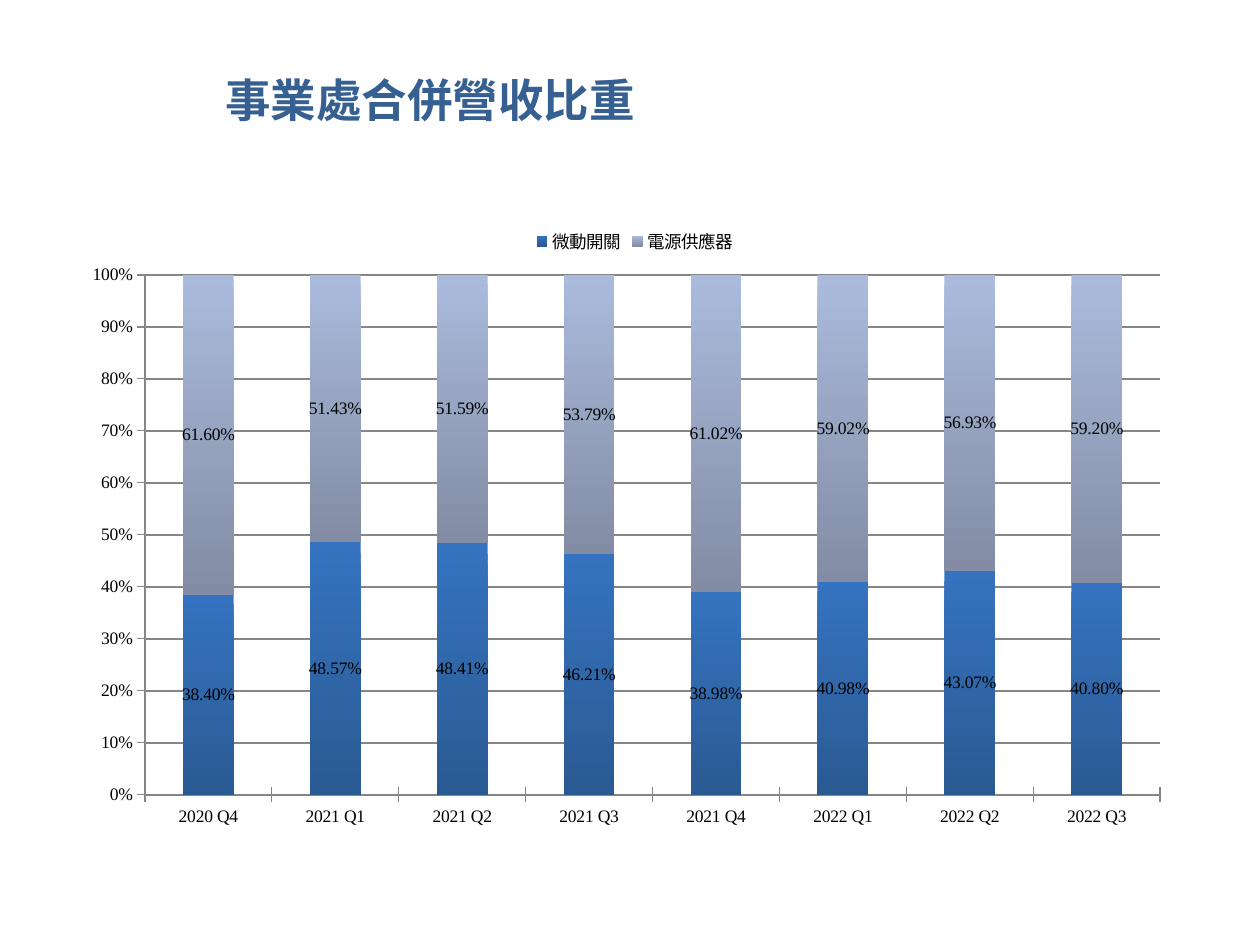
from lxml.etree import SubElement
from pptx import Presentation
from pptx.chart.data import CategoryChartData
from pptx.dml.color import RGBColor
from pptx.enum.chart import XL_CHART_TYPE, XL_LEGEND_POSITION, XL_TICK_MARK
from pptx.enum.text import MSO_ANCHOR
from pptx.oxml.ns import qn
from pptx.util import Cm, Pt

SERIF, CJK = "Times New Roman", "Noto Sans CJK SC"
QUARTERS = ["2020 Q4", "2021 Q1", "2021 Q2", "2021 Q3",
            "2021 Q4", "2022 Q1", "2022 Q2", "2022 Q3"]
# name, shares, gradient from top to bottom
SERIES = [
    ("微動開關", [0.384, 0.4857, 0.4841, 0.4621, 0.3898, 0.4098, 0.4307, 0.408],
     ("3573C0", "2A5A92")),
    ("電源供應器", [0.616, 0.5143, 0.5159, 0.5379, 0.6102, 0.5902, 0.5693, 0.592],
     ("AABBDD", "838CA4")),
]
PLOT = {"x": 0.055, "y": 0.097, "w": 0.922, "h": 0.832}


def paint(code):
    return RGBColor.from_string(code)


def style(font, name, size=10, color="000000", bold=False):
    values = {"name": name, "size": Pt(size), "bold": bold}
    for key, value in values.items():
        setattr(font, key, value)
    font.color.rgb = paint(color)


def rule(line, width):
    line.color.rgb = paint("868686")
    line.width = Pt(width)


def place_plot(chart):
    """Fix the inner plot area as fractions of the chart."""
    area = chart._chartSpace.chart.plotArea
    layout = area.find(qn("c:layout"))
    if layout is None:
        layout = SubElement(area, qn("c:layout"))
        area.insert(0, layout)
    manual = SubElement(layout, qn("c:manualLayout"))
    parts = {"layoutTarget": "inner", "xMode": "edge", "yMode": "edge", **PLOT}
    for key, value in parts.items():
        SubElement(manual, qn(f"c:{key}")).set("val", str(value))


def add_title(slide, left, top, width, height):
    box = slide.shapes.add_textbox(Cm(left), Cm(top), Cm(width), Cm(height))
    frame = box.text_frame
    frame.word_wrap = True
    frame.vertical_anchor = MSO_ANCHOR.MIDDLE
    run = frame.paragraphs[0].add_run()
    run.text = "事業處合併營收比重"
    style(run.font, SERIF, 26, "376092", True)


def add_shares(slide, left, top, width, height):
    data = CategoryChartData(number_format="0.00%")
    data.categories = QUARTERS
    for name, shares, _ in SERIES:
        data.add_series(name, shares)
    chart = slide.shapes.add_chart(
        XL_CHART_TYPE.COLUMN_STACKED, Cm(left), Cm(top), Cm(width), Cm(height),
        data).chart
    chart.has_title = False
    style(chart.font, "Calibri")
    place_plot(chart)

    # Legend
    chart.has_legend = True
    legend = chart.legend
    legend.position = XL_LEGEND_POSITION.TOP
    legend.include_in_layout = False
    style(legend.font, CJK)

    # Axes
    for axis in (chart.category_axis, chart.value_axis):
        axis.major_tick_mark = XL_TICK_MARK.CROSS
        axis.minor_tick_mark = XL_TICK_MARK.NONE
        style(axis.tick_labels.font, SERIF)
        rule(axis.format.line, 0.75)
    scale = chart.value_axis
    limits = {"minimum_scale": 0, "maximum_scale": 1, "major_unit": 0.1,
              "has_major_gridlines": True}
    for key, value in limits.items():
        setattr(scale, key, value)
    rule(scale.major_gridlines.format.line, 1)
    scale.tick_labels.number_format = "0%"
    scale.tick_labels.number_format_is_linked = False

    # Columns and labels
    plot = chart.plots[0]
    for key, value in {"gap_width": 150, "overlap": 100,
                       "vary_by_categories": False}.items():
        setattr(plot, key, value)
    for series, (_, _, shades) in zip(plot.series, SERIES):
        fill = series.format.fill
        fill.gradient()
        fill.gradient_angle = 270
        for stop, shade in zip(fill.gradient_stops, shades):
            stop.color.rgb = paint(shade)
        labels = series.data_labels
        labels.show_value = True
        labels.number_format = "0.00%"
        labels.number_format_is_linked = False
        style(labels.font, SERIF)


def main():
    deck = Presentation()
    deck.slide_width, deck.slide_height = Cm(25.4), Cm(19.05)
    slide = deck.slides.add_slide(deck.slide_layouts[6])
    add_title(slide, 4.29, 1.32, 19.2, 1.37)
    add_shares(slide, 1.7, 4.32, 22.2, 12.6)
    deck.save("out.pptx")


if __name__ == "__main__":
    main()
